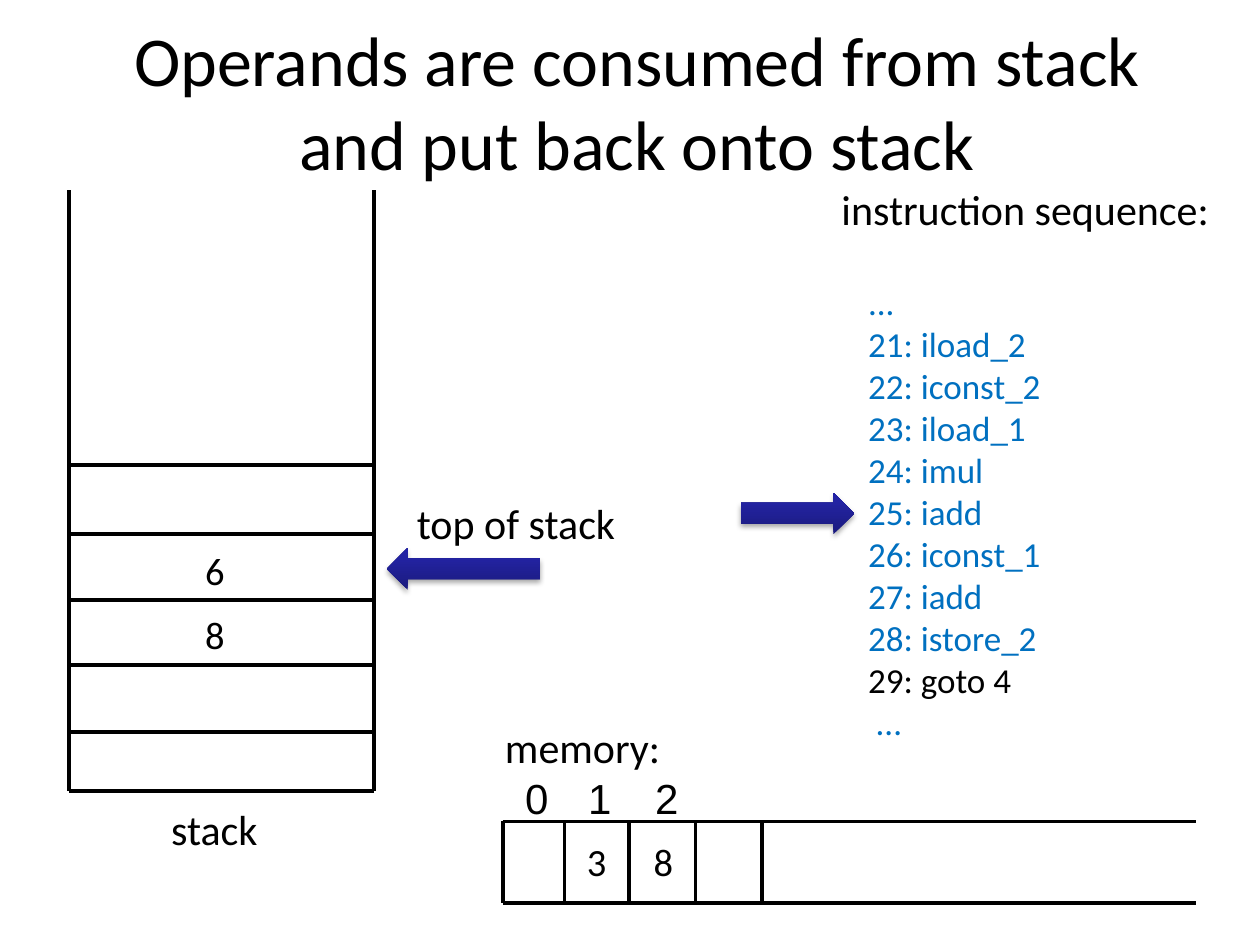
from copy import deepcopy

from lxml.etree import SubElement
from pptx import Presentation
from pptx.dml.color import RGBColor
from pptx.enum.shapes import MSO_CONNECTOR, MSO_SHAPE
from pptx.enum.text import MSO_ANCHOR, PP_ALIGN
from pptx.oxml.ns import qn
from pptx.util import Inches, Pt

BLACK, BLUE = "000000", "0070C0"
ARROW_STOPS = [(0, "1B1B7E"), (0.8, "2323A3"), (1, "2020A6")]

INSTRUCTIONS = ["...", "21: iload_2", "22: iconst_2", "23: iload_1", "24: imul",
                "25: iadd", "26: iconst_1", "27: iadd", "28: istore_2",
                "29: goto 4", "..."]


def color(value):
    return RGBColor.from_string(value)


def add_text(slide, box, lines, size=24, font="Calibri", align=PP_ALIGN.LEFT, **frame_format):
    """Add a text box with one paragraph per line and return its paragraphs."""
    frame = slide.shapes.add_textbox(*map(Inches, box)).text_frame
    for name, value in {"word_wrap": False, **frame_format}.items():
        setattr(frame, name, value)
    frame.text = "\n".join(lines)
    for paragraph in frame.paragraphs:
        paragraph.alignment = align
        for name, value in {"size": Pt(size), "name": font}.items():
            setattr(paragraph.font, name, value)
        paragraph.font.color.rgb = color(BLACK)
    return frame.paragraphs


def add_line(slide, x1, y1, x2, y2):
    line = slide.shapes.add_connector(MSO_CONNECTOR.STRAIGHT,
                                      *map(Inches, (x1, y1, x2, y2)))
    line.line.color.rgb = color(BLACK)
    line.line.width = Pt(2.25)
    SubElement(line._element.spPr, qn("a:effectLst"))


def add_arrow(slide, kind, box):
    arrow = slide.shapes.add_shape(kind, *map(Inches, box))
    arrow.line.fill.background()

    # Gradient with three stops, running upwards
    arrow.fill.gradient()
    arrow.fill.gradient_angle = 90
    stop_list = arrow._element.spPr.find(".//" + qn("a:gsLst"))
    stop_list.append(deepcopy(stop_list[0]))
    for stop, (position, value) in zip(arrow.fill.gradient_stops, ARROW_STOPS):
        stop.position = position
        stop.color.rgb = color(value)

    # Soft shadow below
    arrow.shadow.inherit = False
    effects = arrow._element.spPr.find(qn("a:effectLst"))
    shadow = SubElement(effects, qn("a:outerShdw"), blurRad=str(Pt(3.1)),
                        dist=str(Pt(1.8)), dir="5400000", rotWithShape="0")
    shade = SubElement(shadow, qn("a:srgbClr"), val=BLACK)
    SubElement(shade, qn("a:alpha"), val="35000")


def add_instructions(slide):
    add_text(slide, (6.58, 1.41, 3.15, 0.5), ["instruction sequence:"])
    listing = add_text(slide, (6.66, 2.16, 2.34, 3.8), INSTRUCTIONS, size=20,
                       word_wrap=True, margin_left=Inches(0.23),
                       vertical_anchor=MSO_ANCHOR.MIDDLE)
    for paragraph in listing:
        if "goto" not in paragraph.text:
            paragraph.font.color.rgb = color(BLUE)
    listing[-1]._p.get_or_add_pPr().set("marL", str(Inches(0.06)))
    add_arrow(slide, MSO_SHAPE.RIGHT_ARROW, (5.88, 3.91, 0.9, 0.33))


def add_memory(slide):
    left, right, top, bottom = 3.99, 9.49, 6.52, 7.17
    for y in (top, bottom):
        add_line(slide, left, y, right, y)
    for x in (left, 4.48, 4.99, 5.52, 6.05):
        add_line(slide, x, top, x, bottom)

    add_text(slide, (3.91, 5.68, 1.44, 0.5), ["memory:"])
    for address, x in enumerate((4.07, 4.57, 5.1)):
        add_text(slide, (x, 6.08, 0.39, 0.5), [str(address)], font="Arial")
    for value, x in (("3", 4.56), ("8", 5.09)):
        add_text(slide, (x, 6.6, 0.36, 0.47), [value], size=22)


def add_stack(slide):
    left, right, top, bottom = 0.55, 2.97, 1.51, 6.28
    for x in (left, right):
        add_line(slide, x, top, x, bottom)
    for y in (3.69, 4.24, 4.76, 5.28, 5.81, bottom):
        add_line(slide, left, y, right, y)

    for value, y in (("6", 4.29), ("8", 4.8)):
        add_text(slide, (1.53, y, 0.36, 0.47), [value], size=22)
    add_text(slide, (1.26, 6.33, 0.89, 0.5), ["stack"])
    add_text(slide, (3.21, 3.9, 1.79, 0.5), ["top of stack"])
    add_arrow(slide, MSO_SHAPE.LEFT_ARROW, (3.07, 4.35, 1.22, 0.33))


def main():
    deck = Presentation()
    deck.slide_width, deck.slide_height = Inches(10), Inches(7.5)
    slide = deck.slides.add_slide(deck.slide_layouts[6])

    # Title
    add_text(slide, (0.28, 0.17, 9.55, 1.25),
             ["Operands are consumed from stack\vand put back onto stack"],
             size=40, align=PP_ALIGN.CENTER, word_wrap=True,
             vertical_anchor=MSO_ANCHOR.MIDDLE)

    add_instructions(slide)
    add_memory(slide)
    add_stack(slide)
    deck.save("out.pptx")


if __name__ == "__main__":
    main()
